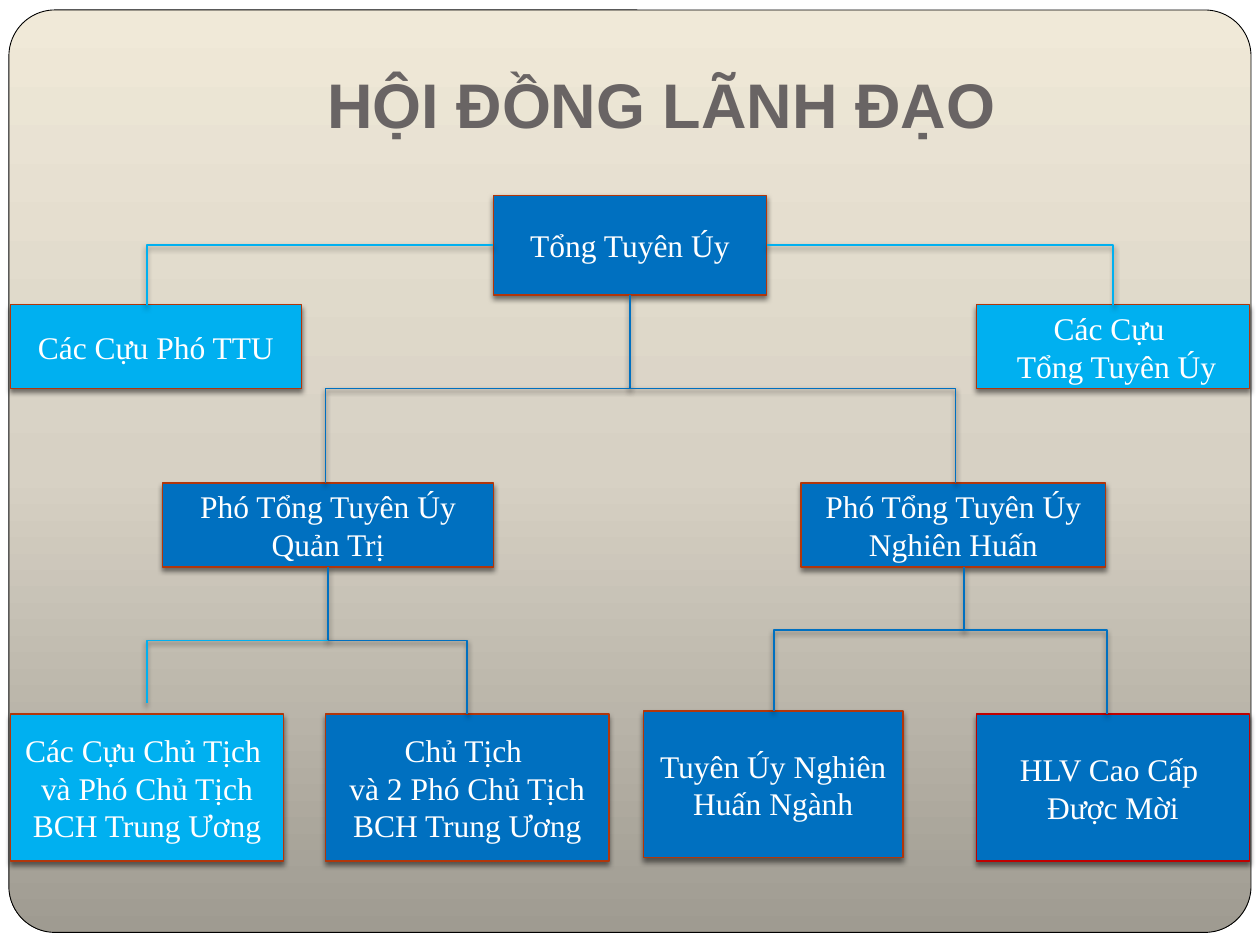
"""Build the leadership council organisation chart on a grid of 120 columns by 90 rows."""
from copy import deepcopy
from dataclasses import dataclass

from lxml import etree
from pptx import Presentation
from pptx.dml.color import RGBColor
from pptx.enum.shapes import MSO_CONNECTOR, MSO_SHAPE
from pptx.enum.text import MSO_ANCHOR, PP_ALIGN
from pptx.oxml.ns import qn
from pptx.util import Inches, Pt

PROCESS, ROUNDED = MSO_SHAPE.FLOWCHART_PROCESS, MSO_SHAPE.ROUNDED_RECTANGLE
STRAIGHT, ELBOW = MSO_CONNECTOR.STRAIGHT, MSO_CONNECTOR.ELBOW
CENTER, MIDDLE, BOTTOM = PP_ALIGN.CENTER, MSO_ANCHOR.MIDDLE, MSO_ANCHOR.BOTTOM

WIDTH, HEIGHT = Inches(10), Inches(7.5)
COLUMNS, ROWS = 120, 90
BOTTOM_SITE = 2
BLUE, SKY, RUST, RED = "0070C0", "00B0F0", "B1360B", "C00000"
WHITE, BLACK, GREY = "FFFFFF", "000000", "696464"
PANEL_STOPS = [(0, "F0E9D8"), (0.5, "D7D1C4"), (1, "9F9B91")]


@dataclass
class Post:
    """A box of the chart, placed in columns and rows."""
    text: str
    left: float
    top: float
    width: float
    height: float
    fill: str = BLUE
    border: str = RUST


@dataclass
class Link:
    """A line that runs sideways first, then up or down."""
    start: tuple[float, float]
    end: tuple[float, float]
    color: str = BLUE
    parent: str = ""


POSTS = {
    "head": Post("Tổng Tuyên Úy", 47, 18.6, 26, 9.5),
    "administration": Post("Phó Tổng Tuyên Úy\nQuản Trị", 15.5, 46, 31.5, 8),
    "training": Post("Phó Tổng Tuyên Úy\nNghiên Huấn", 76.3, 46, 29, 8),
    "former chairs": Post("Các Cựu Chủ Tịch \nvà Phó Chủ Tịch\nBCH Trung Ương",
                          1, 68, 26, 14, SKY),
    "chairs": Post("Chủ Tịch \nvà 2 Phó Chủ Tịch\nBCH Trung Ương", 31, 68, 27, 14),
    "branch": Post("Tuyên Úy Nghiên Huấn Ngành", 61.3, 67.7, 24.7, 14),
    "trainers": Post("HLV Cao Cấp \nĐược Mời", 93, 68, 26, 14, border=RED),
    "former heads": Post("Các Cựu \n Tổng Tuyên Úy", 93, 29, 26, 8, SKY),
    "former deputies": Post("Các Cựu Phó TTU", 1, 29, 27.7, 8, SKY),
}
LINKS = [
    Link((60, 28.1), (60, 37), parent="head"),
    Link((60, 37), (31, 46)),
    Link((60, 37), (91, 46)),
    Link((31.2, 54), (31.2, 61), parent="administration"),
    Link((31.2, 61), (14, 67), SKY),
    Link((31.2, 61), (44.5, 68)),
    Link((91.8, 54), (91.8, 60)),
    Link((91.8, 60), (73.7, 67.7)),
    Link((91.8, 60), (105.4, 68)),
    Link((73, 23.3), (106, 29), SKY),
    Link((47, 23.3), (14, 29), SKY),
]


def across(columns: float) -> int:
    return round(WIDTH * columns / COLUMNS)


def down(rows: float) -> int:
    return round(HEIGHT * rows / ROWS)


def rgb(color: str) -> RGBColor:
    return RGBColor.from_string(color)


def set_shadow(item) -> None:
    properties = item._element.spPr
    effects = etree.SubElement(properties, qn("a:effectLst"))
    shadow = etree.SubElement(effects, qn("a:outerShdw"), blurRad=str(Pt(3)),
                              dist=str(Pt(2)), dir="5400000", rotWithShape="0")
    tint = etree.SubElement(shadow, qn("a:srgbClr"), val=BLACK)
    etree.SubElement(tint, qn("a:alpha"), val="50000")


def set_line(item, color: str, points: float) -> None:
    item.line.color.rgb = rgb(color)
    item.line.width = Pt(points)


def write(frame, text: str, anchor, font: str, size: int, color: str, bold: bool = False) -> None:
    frame.word_wrap = True
    frame.vertical_anchor = anchor
    para = frame.paragraphs[0]
    para.text = text
    para.alignment = CENTER
    for span in para.runs:
        span.font.name, span.font.size, span.font.bold = font, Pt(size), bold
        span.font.color.rgb = rgb(color)


def add_panel(page) -> None:
    panel = page.shapes.add_shape(ROUNDED, across(0.85), down(0.95), across(118.3), down(87.85))
    panel.adjustments[0] = 0.05
    panel.shadow.inherit = False
    panel.fill.gradient()
    panel.fill.gradient_angle = 270
    stops = panel.fill.gradient_stops
    first = stops[0]._gs
    first.addnext(deepcopy(first))
    for stop, (position, color) in zip(panel.fill.gradient_stops, PANEL_STOPS):
        stop.position = position
        stop.color.rgb = rgb(color)
    set_line(panel, BLACK, 0.5)


def add_title(page) -> None:
    box = page.shapes.add_textbox(across(12), down(3), across(102), down(11.6))
    box.text_frame.margin_bottom = Inches(0.1)
    write(box.text_frame, "HỘI ĐỒNG LÃNH ĐẠO", BOTTOM, "Arial", 36, GREY, bold=True)


def add_post(page, post: Post):
    box = page.shapes.add_shape(PROCESS, across(post.left), down(post.top),
                                across(post.width), down(post.height))
    box.fill.solid()
    box.fill.fore_color.rgb = rgb(post.fill)
    set_line(box, post.border, 0.75)
    set_shadow(box)
    write(box.text_frame, post.text, MIDDLE, "Times New Roman", 18, WHITE)
    return box


def add_link(page, link: Link, boxes: dict) -> None:
    (x1, y1), (x2, y2) = link.start, link.end
    kind = STRAIGHT if x1 == x2 else ELBOW
    line = page.shapes.add_connector(kind, across(x1), down(y1), across(x2), down(y2))
    if kind == ELBOW:
        guides = line._element.spPr.find(qn("a:prstGeom")).get_or_add_avLst()
        etree.SubElement(guides, qn("a:gd"), name="adj1", fmla="val 100000")
    if link.parent:
        line.begin_connect(boxes[link.parent], BOTTOM_SITE)
        line.end_x = line.begin_x
    set_line(line, link.color, 1)
    set_shadow(line)


def main() -> None:
    deck = Presentation()
    deck.slide_width, deck.slide_height = WIDTH, HEIGHT
    page = deck.slides.add_slide(deck.slide_layouts[6])
    add_panel(page)
    add_title(page)
    boxes = {name: add_post(page, post) for name, post in POSTS.items()}
    for link in LINKS:
        add_link(page, link, boxes)
    deck.save("out.pptx")


if __name__ == "__main__":
    main()
